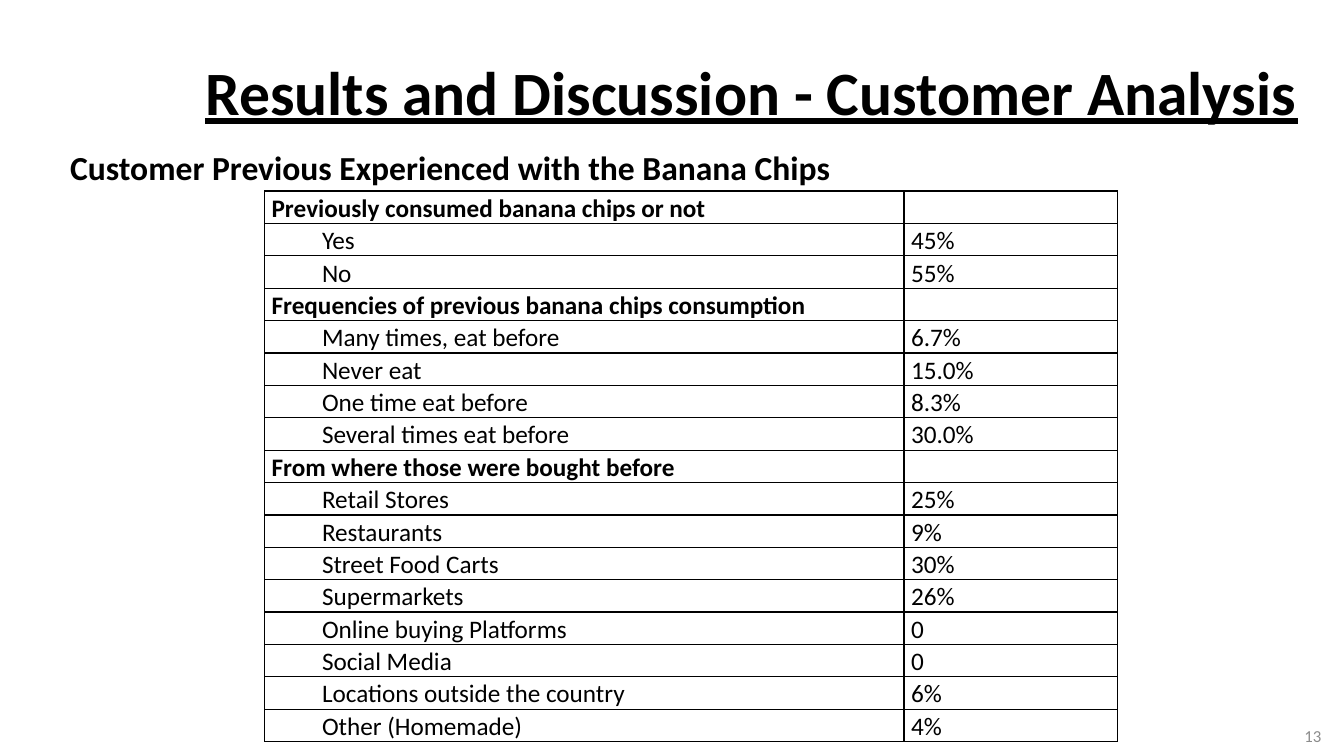
import pptx
import pptx.dml.color
import pptx.enum.text
import pptx.oxml.ns
import pptx.util
from lxml import etree

Pt = pptx.util.Pt
RGB = pptx.dml.color.RGBColor
ALIGN = pptx.enum.text.PP_ALIGN
ANCHOR = pptx.enum.text.MSO_ANCHOR
qn = pptx.oxml.ns.qn

BLACK = RGB(0, 0, 0)
GREY = RGB(0x8C, 0x8C, 0x8C)
FONT = "Calibri"

GROUPS = [
    ("Previously consumed banana chips or not", ANCHOR.TOP,
     [("Yes", "45%"), ("No", "55%")]),
    ("Frequencies of previous banana chips consumption", ANCHOR.MIDDLE,
     [("Many times, eat before", "6.7%"), ("Never eat", "15.0%"),
      ("One time eat before", "8.3%"), ("Several times eat before", "30.0%")]),
    ("From where those were bought before", ANCHOR.BOTTOM,
     [("Retail Stores", "25%"), ("Restaurants", "9%"),
      ("Street Food Carts", "30%"), ("Supermarkets", "26%"),
      ("Online buying Platforms", "0"), ("Social Media", "0"),
      ("Locations outside the country", "6%"), ("Other (Homemade)", "4%")]),
]


def write(frame, text, size=18, color=BLACK, bold=False, line=False,
          align=ALIGN.LEFT, anchor=ANCHOR.TOP, space=1.0, after=0, indent=0):
    """Put one formatted paragraph in a text frame."""
    frame.word_wrap = True
    frame.vertical_anchor = anchor
    para = frame.paragraphs[0]
    para.text = text
    para.alignment = align
    para.line_spacing = space
    para.space_after = Pt(after)
    if indent:
        props = para._p.get_or_add_pPr()
        props.set("marL", str(Pt(indent)))
        props.set("indent", "0")
    font = para.font
    font.name, font.size, font.bold = FONT, Pt(size), bold
    font.underline = line
    font.color.rgb = color


def add_title(slide, left, top, width, height):
    """Place the slide title in its box."""
    title = slide.shapes.title
    title.left, title.top = Pt(left), Pt(top)
    title.width, title.height = Pt(width), Pt(height)
    write(title.text_frame, "Results and Discussion - Customer Analysis",
          size=44, bold=True, line=True, align=ALIGN.CENTER,
          anchor=ANCHOR.MIDDLE, space=0.9)


def add_label(slide, left, top, width, height, text, **style):
    """Place a text box with one paragraph."""
    box = slide.shapes.add_textbox(Pt(left), Pt(top), Pt(width), Pt(height))
    write(box.text_frame, text, **style)


def fill_cell(cell, text, **style):
    """Give a table cell its text, insets and black rules."""
    cell.margin_left = cell.margin_right = Pt(5)
    cell.margin_top = cell.margin_bottom = 0
    anchor = style.pop("anchor", ANCHOR.TOP)
    write(cell.text_frame, text, space=1.07, **style)
    cell.vertical_anchor = anchor
    props = cell._tc.get_or_add_tcPr()
    for side in ("lnL", "lnR", "lnT", "lnB"):
        rule = etree.SubElement(props, qn("a:" + side), w=str(Pt(1)))
        solid = etree.SubElement(rule, qn("a:solidFill"))
        etree.SubElement(solid, qn("a:srgbClr"), val=str(BLACK))
    cell.fill.background()


def add_survey(slide, left, top, width, height):
    """Build the survey table, with a bold row above each group."""
    count = sum(1 + len(items) for _, _, items in GROUPS)
    table = slide.shapes.add_table(
        count, 2, Pt(left), Pt(top), Pt(width), Pt(height)).table
    table.first_row = table.horz_banding = False
    table.columns[0].width = Pt(width * 0.75)
    table.columns[1].width = Pt(width * 0.25)
    rows = iter(table.rows)
    for head, anchor, items in GROUPS:
        name, value = next(rows).cells
        fill_cell(name, head, bold=True)
        fill_cell(value, "")
        for label, share in items:
            name, value = next(rows).cells
            fill_cell(name, label, indent=36, anchor=anchor)
            fill_cell(value, share)


def main():
    """Build and save the slide."""
    deck = pptx.Presentation()
    deck.slide_width, deck.slide_height = Pt(960), Pt(540)
    slide = deck.slides.add_slide(deck.slide_layouts[5])
    add_title(slide, 123, 16, 828, 104)
    add_label(slide, 735, 511, 216, 29, "13", size=12, color=GREY,
              align=ALIGN.RIGHT, anchor=ANCHOR.MIDDLE)
    add_label(slide, 43, 87, 592, 46,
              "Customer Previous Experienced with the Banana Chips",
              size=24, bold=True, space=1.5, after=8)
    add_survey(slide, 189, 136.5, 609, 375)
    deck.save("out.pptx")


if __name__ == "__main__":
    main()
